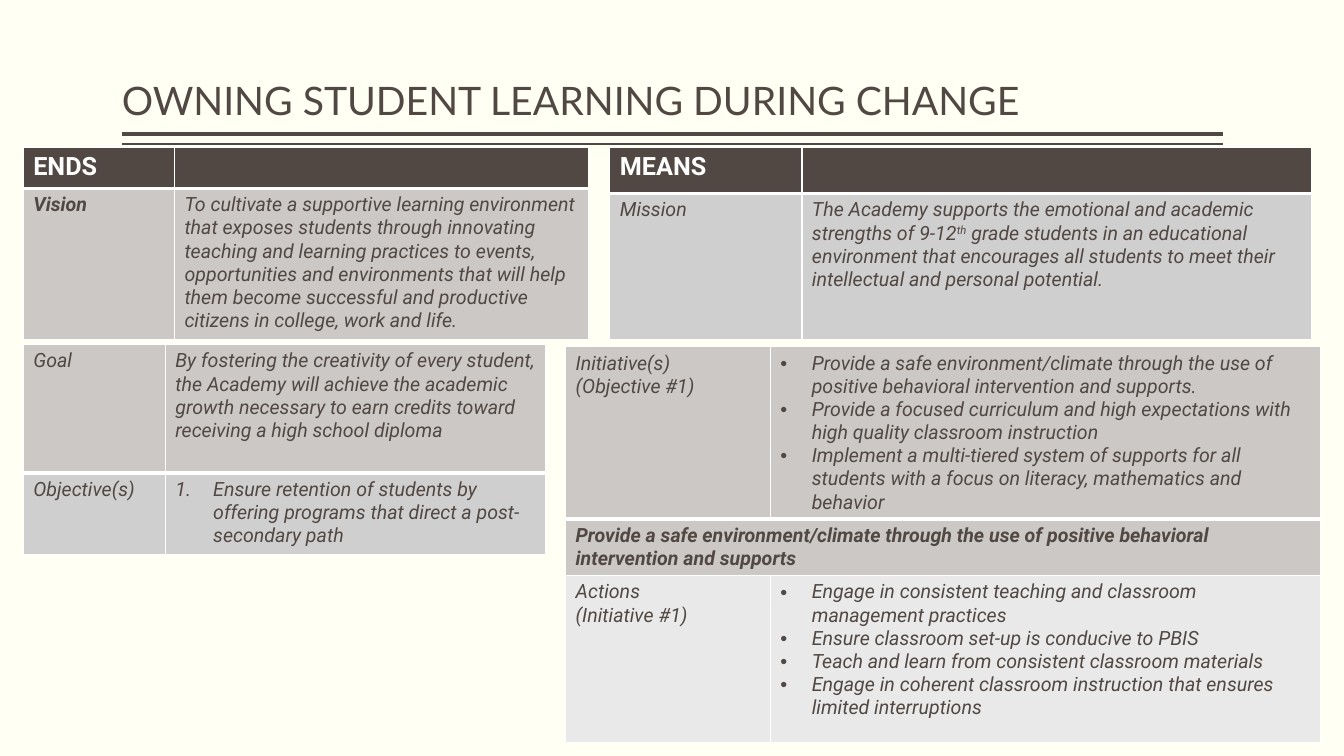
from pptx import Presentation
from pptx.dml.color import RGBColor as RGB
from pptx.enum.shapes import MSO_CONNECTOR as Link
from pptx.enum.text import MSO_ANCHOR as Anchor, MSO_AUTO_SIZE as Auto, PP_ALIGN as Align
from pptx.oxml.ns import qn
from pptx.util import Pt
from lxml.etree import SubElement as Sub

DARK, WHITE, PAGE = "514843", "FFFFFF", "FFFFF3"
WARM, GREY, PALE = "CBC8C5", "D0CFCF", "E9E9E9"


def write(frame, text, font="Roboto", size=14, color=DARK, bold=False,
          italic=True, mark=None, indent=0, space=None):
    """One paragraph per line; text between ^ signs is raised."""
    for n, line in enumerate(text.split("\n")):
        para = frame.add_paragraph() if n else frame.paragraphs[0]
        para.alignment = Align.LEFT
        if space:
            para.line_spacing = space
        if mark:
            props = para._p.get_or_add_pPr()
            props.set("marL", str(Pt(indent)))
            props.set("indent", str(-Pt(indent)))
            if mark == "1.":
                Sub(props, qn("a:buAutoNum"), type="arabicPeriod")
            else:
                Sub(props, qn("a:buFont"), typeface="Arial")
                Sub(props, qn("a:buChar"), char=mark)
        for k, part in enumerate(line.split("^")):
            run = para.add_run()
            run.text = part
            face = run.font
            face.name, face.size = font, Pt(size)
            face.bold, face.italic = bold, italic
            face.color.rgb = RGB.from_string(color)
            if k % 2:
                run._r.get_or_add_rPr().set("baseline", "30000")


def edge(cell, top, base):
    """White cell borders; top and base are widths in points."""
    props = cell._tc.get_or_add_tcPr()
    for side, width in (("L", 1), ("R", 1), ("T", top), ("B", base)):
        line = Sub(props, qn("a:ln" + side), w=str(Pt(width)))
        Sub(Sub(line, qn("a:solidFill")), qn("a:srgbClr"), val=WHITE)


deck = Presentation()
deck.slide_width, deck.slide_height = Pt(960), Pt(540)
slide = deck.slides.add_slide(deck.slide_layouts[5])
back = slide.background.fill
back.solid()
back.fore_color.rgb = RGB.from_string(PAGE)

# Double rule under the title
for y, width in ((95.8, 3), (103, 1)):
    rule = slide.shapes.add_connector(Link.STRAIGHT, Pt(87.1), Pt(y), Pt(873.4), Pt(y))
    rule.line.width = Pt(width)
    rule.line.color.rgb = RGB.from_string(DARK)
    Sub(rule._element.spPr, qn("a:effectLst"))

# Title
title = slide.shapes.title
title.left, title.top, title.width, title.height = Pt(87.1), Pt(5.8), Pt(785.5), Pt(86.4)
frame = title.text_frame
frame.word_wrap, frame.auto_size = True, Auto.NONE
frame.vertical_anchor = Anchor.BOTTOM
frame.margin_left = frame.margin_right = 0
frame.margin_top = frame.margin_bottom = Pt(3.6)
write(frame, "OWNING STUDENT LEARNING DURING CHANGE", font="Lato", size=28,
      italic=False, space=0.9)

# Tables: left, top, column widths, rows of (height, fill, base border, cells)
head = dict(size=18, color=WHITE, bold=True, italic=False)
strong = dict(bold=True)
dots = dict(mark="•", indent=22.5)
count = dict(mark="1.", indent=27)
grids = [
    (16.6, 105.1, (108, 296), [
        (29.5, DARK, 3, [("ENDS", head)]),
        (108, WARM, 1, [
            ("Vision", strong),
            ("To cultivate a supportive learning environment that exposes students through innovating teaching and learning practices to events, opportunities and environments that will help them become successful and productive citizens in college, work and life.", {})]),
    ]),
    (16.6, 246.2, (101.5, 271.5), [
        (91.5, WARM, 3, [
            ("Goal", {}),
            ("By fostering the creativity of every student, the Academy will achieve the academic growth necessary to earn credits toward receiving a high school diploma", {})]),
        (58.5, GREY, 1, [
            ("Objective(s)", {}),
            ("Ensure retention of students by offering programs that direct a post-secondary path", count)]),
    ]),
    (435.6, 105.1, (137.2, 364), [
        (33.2, DARK, 3, [("MEANS", head)]),
        (104, GREY, 1, [
            ("Mission", {}),
            ("The Academy supports the emotional and academic strengths of 9-12^th^ grade students in an educational environment that encourages all students to meet their intellectual and personal potential.", {})]),
    ]),
    (404, 247.7, (146.2, 393), [
        (122.4, WARM, 3, [
            ("Initiative(s)\n(Objective #1)", {}),
            ("Provide a safe environment/climate through the use of positive behavioral intervention and supports.\n"
             "Provide a focused curriculum and high expectations with high quality classroom instruction\n"
             "Implement a multi-tiered system of supports for all students with a focus on literacy, mathematics and behavior", dots)]),
        (40, WARM, 1, [
            ("Provide a safe environment/climate through the use of positive behavioral intervention and supports", strong)]),
        (119, PALE, 1, [
            ("Actions\n(Initiative #1)", {}),
            ("Engage in consistent teaching and classroom management practices\n"
             "Ensure classroom set-up is conducive to PBIS\n"
             "Teach and learn from consistent classroom materials\n"
             "Engage in coherent classroom instruction that ensures limited interruptions", dots)]),
    ]),
]

for left, top, cols, rows in grids:
    high = sum(row[0] for row in rows)
    grid = slide.shapes.add_table(len(rows), len(cols), Pt(left), Pt(top),
                                  Pt(sum(cols)), Pt(high)).table
    grid.first_row = grid.horz_banding = False
    for col, width in zip(grid.columns, cols):
        col.width = Pt(width)
    above = 1
    for r, (tall, fill, base, texts) in enumerate(rows):
        grid.rows[r].height = Pt(tall)
        for c in range(len(cols)):
            cell = grid.cell(r, c)
            edge(cell, above, base)
            cell.fill.solid()
            cell.fill.fore_color.rgb = RGB.from_string(fill)
        for c, (text, form) in enumerate(texts):
            write(grid.cell(r, c).text_frame, text, **form)
        # A lone text outside a header row spans the row
        if len(texts) == 1 and fill != DARK:
            grid.cell(r, 0).merge(grid.cell(r, 1))
        above = base

deck.save("out.pptx")
